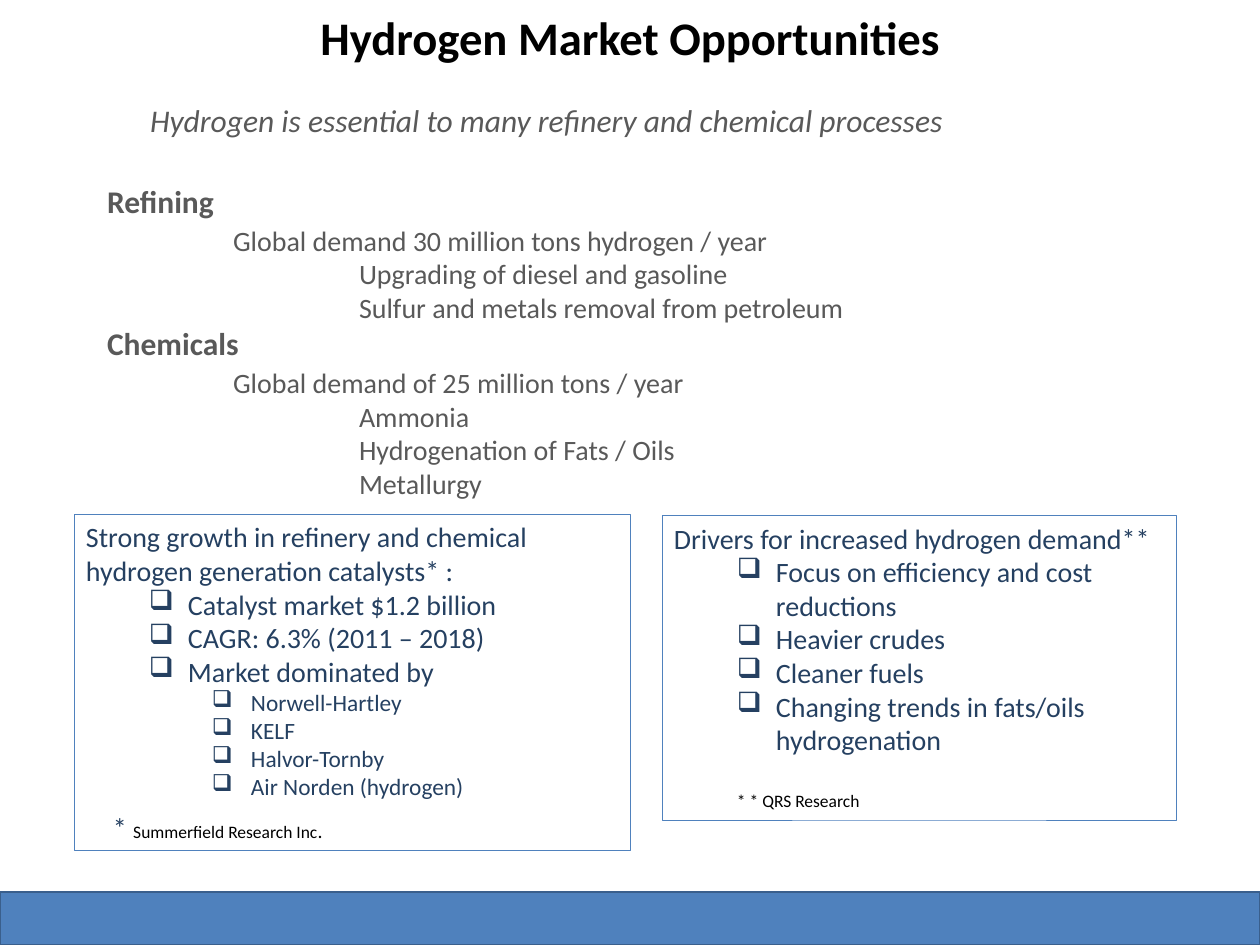
from typing import NamedTuple

from lxml.etree import SubElement
from pptx import Presentation
from pptx.dml.color import RGBColor
from pptx.enum.shapes import MSO_SHAPE as Shape
from pptx.enum.text import MSO_ANCHOR as Anchor, MSO_AUTO_SIZE as AutoSize, PP_ALIGN as Align
from pptx.oxml.ns import qn
from pptx.util import Emu, Pt

EMU_PER_PX = 914400 / 84
FONT = "Calibri"
BLACK, GRAY, NAVY, BLUE, EDGE = "000000", "595959", "254061", "4F81BD", "3A5F8C"
HANG = 39  # px between a bullet and its text


class Box(NamedTuple):
    left: int
    top: int
    width: int
    height: int


class Run(NamedTuple):
    text: str
    size: int
    color: str


class Line(NamedTuple):
    runs: list[Run]
    indent: int = 0
    bullet: bool = False
    before: int = 0
    bold: bool = False
    italic: bool = False


class Panel(NamedTuple):
    box: Box
    lines: list[Line]


def px(length: int) -> Emu:
    return Emu(round(length * EMU_PER_PX))


def color(hex_code: str) -> RGBColor:
    return RGBColor.from_string(hex_code)


def place(shape, box: Box) -> None:
    shape.left, shape.top, shape.width, shape.height = map(px, box)


def write(shape, lines: list[Line], *, align=Align.LEFT, anchor=Anchor.TOP) -> None:
    frame = shape.text_frame
    frame.auto_size = AutoSize.NONE
    frame.word_wrap = True
    frame.vertical_anchor = anchor
    frame.margin_left = frame.margin_right = px(12)
    frame.margin_top = frame.margin_bottom = px(6)
    for number, line in enumerate(lines):
        paragraph = frame.paragraphs[0] if number == 0 else frame.add_paragraph()
        paragraph.alignment = align
        paragraph.space_before = Pt(line.before)
        properties = paragraph._p.get_or_add_pPr()
        properties.set("marL", str(px(line.indent)))
        properties.set("indent", str(px(-HANG if line.bullet else 0)))
        if line.bullet:
            SubElement(properties, qn("a:buChar")).set("char", "❑")
        for part in line.runs:
            run = paragraph.add_run()
            run.text = part.text
            font = run.font
            font.name, font.size = FONT, Pt(part.size)
            font.bold, font.italic = line.bold, line.italic
            font.color.rgb = color(part.color)


def add_rectangle(slide, box: Box, *, line: str, weight: float, fill: str | None = None):
    rectangle = slide.shapes.add_shape(Shape.RECTANGLE, *map(px, box))
    rectangle.shadow.inherit = False
    if fill:
        rectangle.fill.solid()
        rectangle.fill.fore_color.rgb = color(fill)
    else:
        rectangle.fill.background()
    rectangle.line.color.rgb = color(line)
    rectangle.line.width = Pt(weight)
    return rectangle


def sector(name: str, demand: str, uses: list[str]) -> list[Line]:
    """Heading, demand and uses of one market sector, each a step further in."""
    step = 126
    return [
        Line([Run(name, 27, GRAY)], bold=True),
        Line([Run(demand, 24, GRAY)], indent=step, before=3),
        *(Line([Run(use, 24, GRAY)], indent=2 * step) for use in uses),
    ]


def heading(text: str) -> Line:
    return Line([Run(text, 24, NAVY)])


def bullets(texts: list[str], *, indent: int = 102, size: int = 24) -> list[Line]:
    return [Line([Run(text, size, NAVY)], indent=indent, bullet=True) for text in texts]


MARKET = [
    Line([Run("Hydrogen is essential to many refinery and chemical processes", 27, GRAY)],
         indent=43, italic=True),
    *sector("Refining", "Global demand 30 million tons hydrogen / year",
            ["Upgrading of diesel and gasoline", "Sulfur and metals removal from petroleum"]),
    *sector("Chemicals", "Global demand of 25 million tons / year",
            ["Ammonia", "Hydrogenation of Fats / Oils", "Metallurgy"]),
]
MARKET[1] = MARKET[1]._replace(before=37)

GROWTH = Panel(Box(74, 514, 556, 337), [
    heading("Strong growth in refinery and chemical hydrogen generation catalysts* :"),
    *bullets(["Catalyst market $1.2 billion", "CAGR: 6.3% (2011 – 2018)", "Market dominated by"]),
    *bullets(["Norwell-Hartley", "KELF", "Halvor-Tornby", "Air Norden (hydrogen)"],
             indent=165, size=20),
    Line([Run("* ", 24, NAVY), Run("Summerfield Research Inc", 15, BLACK), Run(".", 17, BLACK)],
         indent=27, before=9),
])
DRIVERS = Panel(Box(662, 515, 514, 305), [
    heading("Drivers for increased hydrogen demand**"),
    *bullets(["Focus on efficiency and cost reductions", "Heavier crudes", "Cleaner fuels",
              "Changing trends in fats/oils hydrogenation"]),
    Line([Run("* * QRS Research", 15, BLACK)], indent=63, before=29),
])


def main() -> None:
    deck = Presentation()
    deck.slide_width, deck.slide_height = px(1260), px(945)
    slide = deck.slides.add_slide(deck.slide_layouts[5])

    title = slide.shapes.title
    place(title, Box(0, -42, 1260, 158))
    write(title, [Line([Run("Hydrogen Market Opportunities", 40, BLACK)], bold=True)],
          align=Align.CENTER, anchor=Anchor.MIDDLE)

    market = slide.shapes.add_textbox(*map(px, Box(95, 95, 878, 551)))
    write(market, MARKET)

    for panel in (GROWTH, DRIVERS):
        write(add_rectangle(slide, panel.box, line=BLUE, weight=0.75), panel.lines)

    add_rectangle(slide, Box(0, 892, 1260, 53), line=EDGE, weight=2, fill=BLUE)
    deck.save("out.pptx")


if __name__ == "__main__":
    main()
